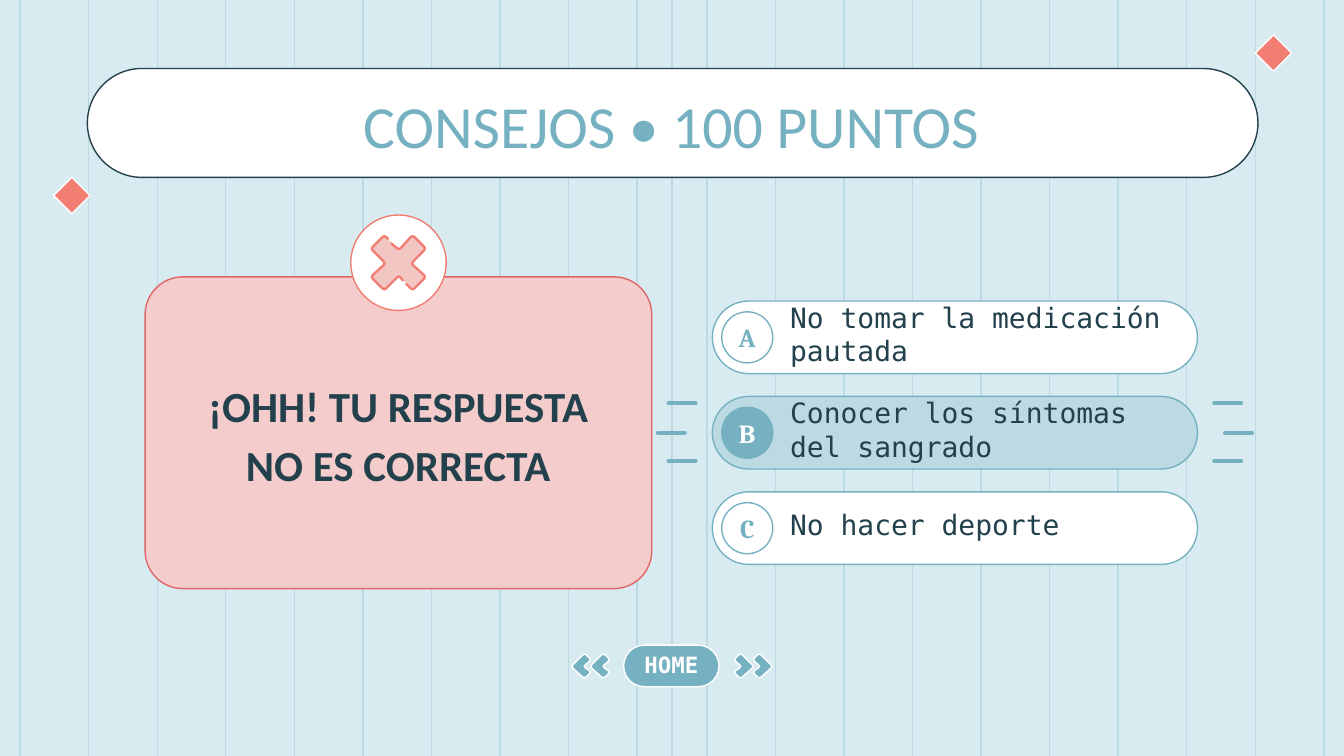
"""Build a quiz feedback slide with a message card, three answers and navigation."""
from dataclasses import dataclass
from math import hypot
from typing import Optional

from lxml.etree import SubElement
from pptx import Presentation
from pptx.dml.color import RGBColor
from pptx.enum.shapes import MSO_CONNECTOR, MSO_SHAPE
from pptx.enum.text import MSO_ANCHOR, MSO_AUTO_SIZE, PP_ALIGN
from pptx.oxml.ns import qn
from pptx.shapes.autoshape import Shape
from pptx.slide import Slide
from pptx.util import Inches, Pt

SKY = RGBColor(0xD8, 0xEB, 0xF0)
STRIPE = RGBColor(0xBC, 0xDA, 0xE2)
TEAL = RGBColor(0x76, 0xB1, 0xC1)
NAVY = RGBColor(0x23, 0x41, 0x4C)
CORAL = RGBColor(0xF2, 0x7D, 0x72)
BLUSH = RGBColor(0xF2, 0xC6, 0xC2)
PINK = RGBColor(0xF4, 0xCC, 0xCC)
RED = RGBColor(0xE0, 0x66, 0x66)
WHITE = RGBColor(0xFF, 0xFF, 0xFF)
MONO = "DejaVu Sans Mono"
WIDTH = 10
HEIGHT = WIDTH * 9 / 16

Point = tuple[float, float]
Box = tuple[float, float, float, float]


@dataclass(frozen=True)
class TextStyle:
    font: str
    size: float
    color: RGBColor
    bold: bool = False
    align: PP_ALIGN = PP_ALIGN.CENTER
    spacing: float = 1.0


@dataclass(frozen=True)
class Answer:
    letter: str
    text: str
    fill: RGBColor
    badge: RGBColor
    letter_color: RGBColor


ANSWERS = (
    Answer("A", "No tomar la medicación pautada", WHITE, WHITE, TEAL),
    Answer("B", "Conocer los síntomas del sangrado", STRIPE, TEAL, WHITE),
    Answer("C", "No hacer deporte", WHITE, WHITE, TEAL),
)
CROSS = ((2.86, 1.75), (2.97, 1.86), (3.07, 1.75), (3.17, 1.85), (3.06, 1.96), (3.17, 2.06),
         (3.07, 2.16), (2.97, 2.05), (2.86, 2.16), (2.76, 2.06), (2.87, 1.96), (2.76, 1.85))
CROSS_RIGHT = ((2.91, 1.81), (2.97, 1.86), (3.07, 1.75), (3.17, 1.85), (3.06, 1.96),
               (3.17, 2.06), (3.07, 2.16), (3.02, 2.11))
CROSS_LEFT = ((2.89, 1.78), (2.86, 1.75), (2.76, 1.85), (2.87, 1.96), (2.76, 2.06),
              (2.86, 2.16), (2.97, 2.05), (3.0, 2.09))
CHEVRON = ((5.51, 4.86), (5.61, 4.96), (5.51, 5.05), (5.46, 5.0), (5.52, 4.96), (5.46, 4.91))


def write(shape: Shape, text: str, style: TextStyle, insets: Box, anchor: MSO_ANCHOR = MSO_ANCHOR.MIDDLE) -> None:
    frame = shape.text_frame
    frame.word_wrap = True
    frame.auto_size = MSO_AUTO_SIZE.NONE
    frame.vertical_anchor = anchor
    frame.margin_left, frame.margin_top, frame.margin_right, frame.margin_bottom = map(Inches, insets)
    paragraph = frame.paragraphs[0]
    paragraph.alignment = style.align
    paragraph.line_spacing = style.spacing
    run = paragraph.add_run()
    run.text = text
    run.font.name = style.font
    run.font.size = Pt(style.size)
    run.font.bold = style.bold
    run.font.color.rgb = style.color


def paint(shape: Shape, fill: Optional[RGBColor], line: Optional[RGBColor], weight: float = 0.75) -> None:
    shape.shadow.inherit = False
    if fill is None:
        shape.fill.background()
    else:
        shape.fill.solid()
        shape.fill.fore_color.rgb = fill
    if line is None:
        shape.line.fill.background()
    else:
        shape.line.color.rgb = line
        shape.line.width = Pt(weight)


def add_box(slide: Slide, kind: MSO_SHAPE, box: Box, fill: RGBColor, line: RGBColor,
            corner: float = 0.5) -> Shape:
    shape = slide.shapes.add_shape(kind, *map(Inches, box))
    if kind == MSO_SHAPE.ROUNDED_RECTANGLE:
        shape.adjustments[0] = corner
    paint(shape, fill, line)
    return shape


def add_line(slide: Slide, start: Point, end: Point, color: RGBColor, weight: float) -> None:
    line = slide.shapes.add_connector(MSO_CONNECTOR.STRAIGHT, *map(Inches, start + end))
    line.line.color.rgb = color
    line.line.width = Pt(weight)
    line.line._get_or_add_ln().set("cap", "rnd")
    SubElement(line.element.spPr, qn("a:effectLst"))


def toward(corner: Point, other: Point, radius: float) -> Point:
    share = min(0.5, radius / hypot(other[0] - corner[0], other[1] - corner[1]))
    return tuple(a + (b - a) * share for a, b in zip(corner, other))


def soften(points: tuple[Point, ...], closed: bool, radius: float = 0.02) -> list[Point]:
    result = []
    for index, corner in enumerate(points):
        if not closed and index in (0, len(points) - 1):
            result.append(corner)
            continue
        before = toward(corner, points[index - 1], radius)
        after = toward(corner, points[(index + 1) % len(points)], radius)
        middle = tuple((a + 2 * b + c) / 4 for a, b, c in zip(before, corner, after))
        result += [before, middle, after]
    return result


def add_outline(slide: Slide, points: tuple[Point, ...], fill: Optional[RGBColor],
                line: Optional[RGBColor], closed: bool = True, weight: float = 0.75) -> None:
    vertices = [(Inches(x), Inches(y)) for x, y in soften(points, closed)]
    builder = slide.shapes.build_freeform(*vertices[0])
    builder.add_line_segments(vertices[1:], close=closed)
    paint(builder.convert_to_shape(), fill, line, weight)


def add_background(slide: Slide) -> None:
    slide.background.fill.solid()
    slide.background.fill.fore_color.rgb = SKY
    for x in [0.15 + 0.51 * index for index in range(10)] + [WIDTH / 2]:
        for position in sorted({x, WIDTH - x}):
            add_line(slide, (position, 0), (position, HEIGHT), STRIPE, 0.75)


def add_heading(slide: Slide) -> None:
    add_box(slide, MSO_SHAPE.ROUNDED_RECTANGLE, (0.65, 0.51, 8.71, 0.81), WHITE, NAVY)
    for left, top in ((0.4, 1.32), (9.34, 0.26)):
        add_box(slide, MSO_SHAPE.DIAMOND, (left, top, 0.27, 0.27), CORAL, WHITE)
    title = slide.shapes.title
    slide.shapes.element.append(title.element)
    title.left, title.top, title.width, title.height = map(Inches, (1.31, 0.56, 7.37, 0.65))
    write(title, "CONSEJOS • 100 PUNTOS", TextStyle("Calibri", 32, TEAL), (0.1, 0.1, 0.1, 0.1), MSO_ANCHOR.TOP)


def add_card(slide: Slide) -> None:
    card = add_box(slide, MSO_SHAPE.ROUNDED_RECTANGLE, (1.08, 2.06, 3.77, 2.32), PINK, RED, 0.121)
    write(card, "¡OHH! TU RESPUESTA NO ES CORRECTA",
          TextStyle("Calibri", 23, NAVY, bold=True, spacing=1.15), (0.3, 0.45, 0.3, 0.47))


def add_answer(slide: Slide, answer: Answer, top: float) -> None:
    pill = add_box(slide, MSO_SHAPE.ROUNDED_RECTANGLE, (5.3, top, 3.61, 0.54), answer.fill, TEAL)
    write(pill, answer.text, TextStyle(MONO, 15, NAVY, align=PP_ALIGN.LEFT), (0.5, 0.05, 0.1, 0.1))
    badge = add_box(slide, MSO_SHAPE.OVAL, (5.37, top + 0.08, 0.38, 0.38), answer.badge, TEAL)
    write(badge, answer.letter, TextStyle("Cambria", 14, answer.letter_color, bold=True), (0, 0.1, 0, 0.1))


def add_emphasis(slide: Slide) -> None:
    center = 7.105
    for side in (1, -1):
        for y, offset in ((3.0, 1.93), (3.22, 2.01), (3.43, 1.93)):
            add_line(slide, (center + side * (offset + 0.2), y), (center + side * offset, y), TEAL, 2.25)


def add_navigation(slide: Slide) -> None:
    home = add_box(slide, MSO_SHAPE.ROUNDED_RECTANGLE, (4.64, 4.8, 0.71, 0.31), TEAL, WHITE)
    write(home, "HOME", TextStyle(MONO, 12, WHITE, bold=True), (0.1, 0.08, 0.1, 0.1))
    home.text_frame.word_wrap = False
    for shift in (0, 0.14):
        chevron = tuple((x + shift, y) for x, y in CHEVRON)
        add_outline(slide, chevron, TEAL, WHITE)
        add_outline(slide, tuple((WIDTH - x, y) for x, y in chevron), TEAL, WHITE)


def add_wrong_mark(slide: Slide) -> None:
    add_box(slide, MSO_SHAPE.OVAL, (2.61, 1.6, 0.71, 0.71), WHITE, CORAL)
    add_outline(slide, CROSS, BLUSH, None)
    for stroke in (CROSS_RIGHT, CROSS_LEFT):
        add_outline(slide, stroke, None, CORAL, closed=False, weight=1.25)


def main() -> None:
    presentation = Presentation()
    presentation.slide_width, presentation.slide_height = Inches(WIDTH), Inches(HEIGHT)
    slide = presentation.slides.add_slide(presentation.slide_layouts[5])
    add_background(slide)
    add_heading(slide)
    add_card(slide)
    for index, answer in enumerate(ANSWERS):
        add_answer(slide, answer, 2.24 + 0.71 * index)
    add_emphasis(slide)
    add_navigation(slide)
    add_wrong_mark(slide)
    presentation.save("out.pptx")


if __name__ == "__main__":
    main()
